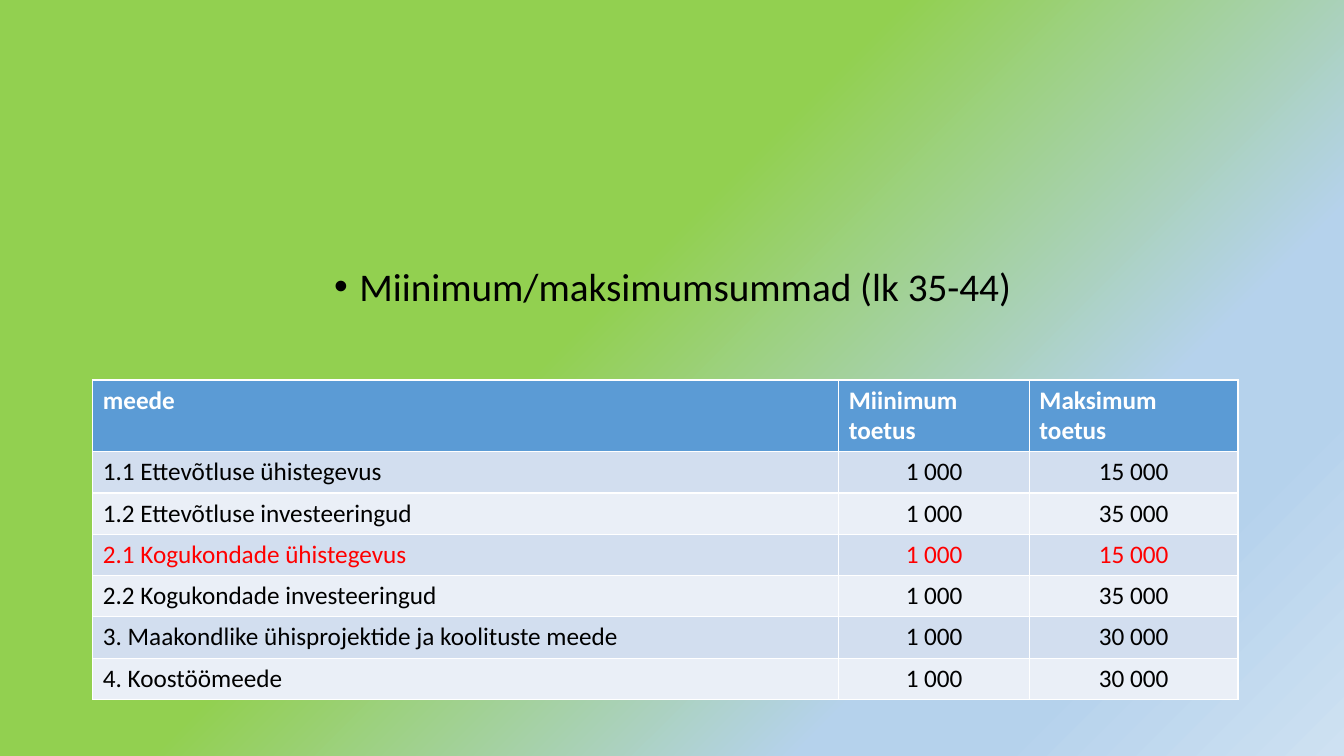
from pptx import Presentation
from pptx.dml.color import RGBColor
from pptx.enum.text import MSO_ANCHOR, MSO_AUTO_SIZE, PP_ALIGN
from pptx.oxml import parse_xml
from pptx.oxml.ns import nsdecls
from pptx.util import Inches, Pt
from lxml.etree import SubElement

COLORS = {
    "green": "92D050", "sky": "B5D2EC", "mist": "CEE1F2",
    "header": "5B9BD5", "band": "D2DEEF", "light": "EAEFF7",
    "white": "FFFFFF", "black": "000000", "red": "FF0000",
}

GRADIENT = [(43, "green"), (74, "sky"), (83, "sky"), (100, "mist")]

HEADINGS = ["meede", "Miinimum toetus", "Maksimum toetus"]
MEASURES = [
    ("1.1 Ettevõtluse ühistegevus", "1 000", "15 000"),
    ("1.2 Ettevõtluse investeeringud", "1 000", "35 000"),
    ("2.1 Kogukondade ühistegevus", "1 000", "15 000"),
    ("2.2 Kogukondade investeeringud", "1 000", "35 000"),
    ("3. Maakondlike ühisprojektide ja koolituste meede", "1 000", "30 000"),
    ("4. Koostöömeede", "1 000", "30 000"),
]
HIGHLIGHTED = "2.1 Kogukondade ühistegevus"


class SlideBuilder:
    font_name = "Calibri"

    def __init__(self, deck):
        self.page = deck.slides.add_slide(deck.slide_layouts[1])
        title = self.page.shapes.title
        title.element.getparent().remove(title.element)

    def style(self, para, size, color, bold=False):
        font = para.font
        font.name, font.size, font.bold = self.font_name, Pt(size), bold
        font.color.rgb = RGBColor.from_string(COLORS[color])

    def background(self, stops):
        fill = self.page.background.fill
        fill.gradient()
        gradient = self.page.element.xpath(".//p:bg//a:gradFill")[0]
        marks = "".join(
            f'<a:gs pos="{position * 1000}"><a:srgbClr val="{COLORS[color]}"/></a:gs>'
            for position, color in stops
        )
        gradient.getparent().replace(gradient, parse_xml(
            f'<a:gradFill {nsdecls("a")} rotWithShape="1"><a:gsLst>{marks}</a:gsLst>'
            '<a:path path="circle"><a:fillToRect r="100000" b="100000"/></a:path>'
            '</a:gradFill>'
        ))

    def bullet(self, text, left, top, width, height):
        box = self.page.placeholders[1]
        box.left, box.top = Inches(left), Inches(top)
        box.width, box.height = Inches(width), Inches(height)
        frame = box.text_frame
        frame.word_wrap = True
        frame.auto_size = MSO_AUTO_SIZE.NONE
        frame.vertical_anchor = MSO_ANCHOR.TOP
        para = frame.paragraphs[0]
        para.text = text
        properties = para._p.get_or_add_pPr()
        properties.set("marL", str(Inches(0.25)))
        properties.set("indent", str(Inches(-0.25)))
        namespace = properties.nsmap["a"]
        SubElement(properties, f"{{{namespace}}}buFont", typeface="Arial")
        SubElement(properties, f"{{{namespace}}}buChar", char="•")
        para.alignment = PP_ALIGN.CENTER
        para.line_spacing = 0.9
        para.space_before = Pt(0)
        self.style(para, 28, "black")

    def cell(self, cell, text, fill, color, align, bold=False):
        cell.fill.solid()
        cell.fill.fore_color.rgb = RGBColor.from_string(COLORS[fill])
        para = cell.text_frame.paragraphs[0]
        para.text = text
        para.alignment = align
        self.style(para, 18, color, bold)

    def table(self, left, top, widths, header_height, row_height):
        rows = len(MEASURES) + 1
        height = header_height + row_height * len(MEASURES)
        table = self.page.shapes.add_table(
            rows, len(widths), Inches(left), Inches(top),
            Inches(sum(widths)), Inches(height),
        ).table
        for column, width in zip(table.columns, widths):
            column.width = Inches(width)
        for index, row in enumerate(table.rows):
            row.height = Inches(row_height if index else header_height)
        for column, heading in enumerate(HEADINGS):
            self.cell(table.cell(0, column), heading, "header", "white", PP_ALIGN.LEFT, True)
        for row, measure in enumerate(MEASURES, 1):
            fill = "band" if row % 2 else "light"
            color = "red" if measure[0] == HIGHLIGHTED else "black"
            for column, text in enumerate(measure):
                align = PP_ALIGN.CENTER if column else PP_ALIGN.LEFT
                self.cell(table.cell(row, column), text, fill, color, align)


def main():
    deck = Presentation()
    deck.slide_width, deck.slide_height = Inches(13.33), Inches(7.5)
    builder = SlideBuilder(deck)
    builder.background(GRADIENT)
    builder.bullet("Miinimum/maksimumsummad (lk 35-44)", 0.92, 2.6, 11.5, 4.16)
    builder.table(0.92, 3.77, [7.4, 1.89, 2.07], 0.7, 0.41)
    deck.save("out.pptx")


if __name__ == "__main__":
    main()
